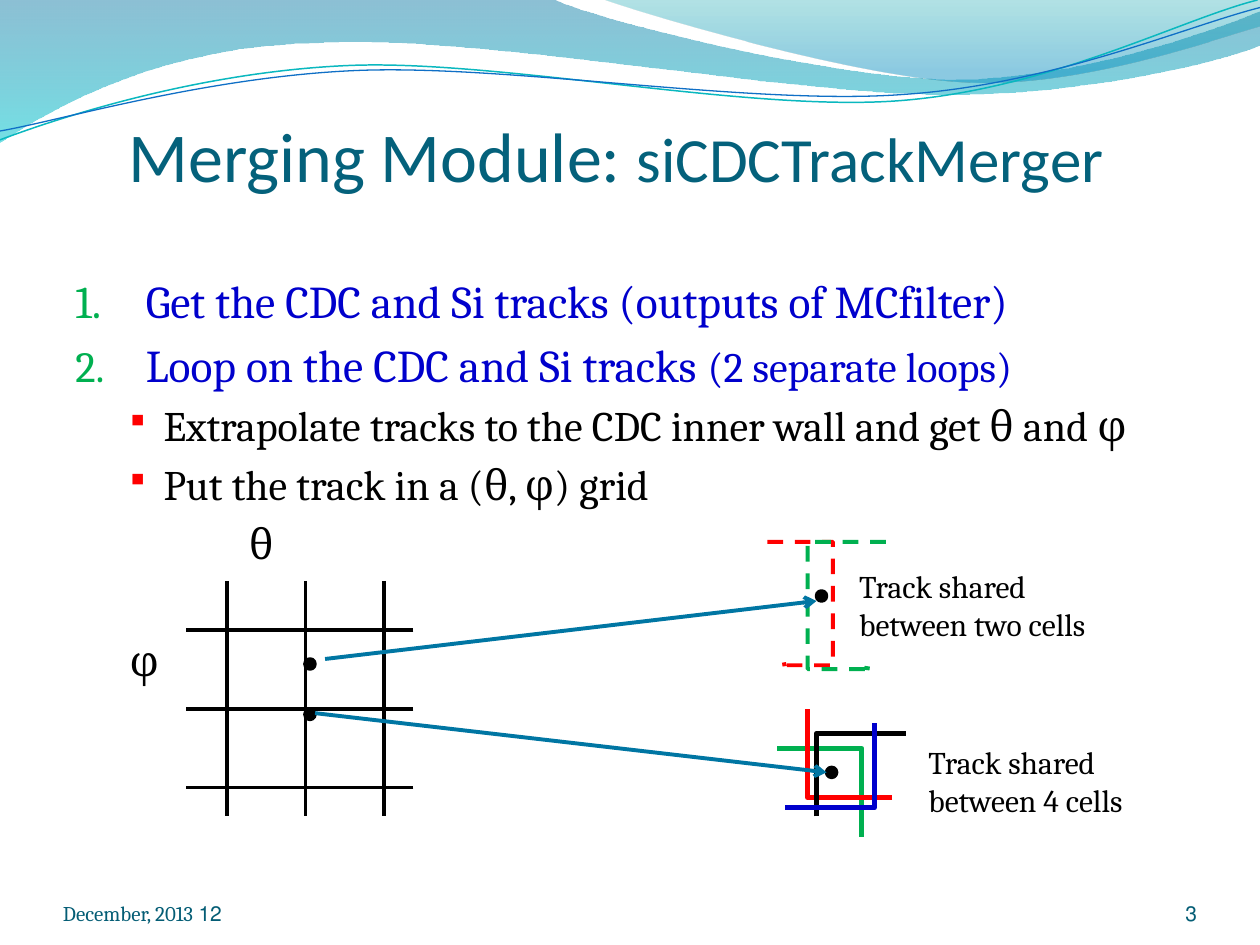
from dataclasses import dataclass
from typing import Optional

from lxml.etree import SubElement
from pptx import Presentation
from pptx.dml.color import RGBColor
from pptx.enum.dml import MSO_LINE as Dash
from pptx.enum.shapes import MSO_CONNECTOR as Connector, MSO_SHAPE as Preset
from pptx.enum.text import MSO_ANCHOR as Anchor, PP_ALIGN as Align
from pptx.oxml.ns import qn
from pptx.util import Emu, Inches, Pt

BLACK = RGBColor(0x00, 0x00, 0x00)
RED = RGBColor(0xFF, 0x00, 0x00)
GREEN = RGBColor(0x00, 0xB0, 0x50)
BLUE = RGBColor(0x00, 0x00, 0xCC)
TITLE_TEAL = RGBColor(0x04, 0x61, 0x7B)
FOOTER_TEAL = RGBColor(0x04, 0x5D, 0x75)
ARROW_BLUE = RGBColor(0x00, 0x76, 0xA3)
WAVE_TEAL = RGBColor(0x0A, 0xB8, 0xBF)
WAVE_BLUE = RGBColor(0x0F, 0x6F, 0xC6)

SLIDE_WIDTH, SLIDE_HEIGHT = Inches(10), Inches(7.5)
COLUMN, ROW = SLIDE_WIDTH / 10, SLIDE_HEIGHT / 7.5
Point = tuple[float, float]


@dataclass
class Stop:
    position: float
    color: RGBColor
    opacity: int


@dataclass
class Outline:
    points: list[Point]
    color: RGBColor
    width: float
    dash: Optional[Dash] = None
    pattern: str = ""


@dataclass
class Item:
    runs: list[tuple[str, float]]
    color: RGBColor
    margin: float
    hanging: float = 0
    space: float = 4.8
    bullet: str = ""
    bullet_color: RGBColor = RED
    bullet_size: int = 85


@dataclass
class Label:
    text: str
    box: tuple[float, float, float, float]
    size: float = 18
    color: RGBColor = BLACK
    footer: bool = False
    align: Align = Align.LEFT


def place(column: float, row: float) -> tuple[Emu, Emu]:
    return Emu(round(column * COLUMN)), Emu(round(row * ROW))


def bend(shape, pattern: str) -> None:
    lines = iter(list(shape._element.iter(qn("a:lnTo"))))
    for kind in pattern:
        line = next(lines)
        if kind == "C":
            line.tag = qn("a:cubicBezTo")
            for extra in (next(lines), next(lines)):
                line.append(extra[0])
                extra.getparent().remove(extra)


def add_freeform(shapes, points: list[Point], close: bool, pattern: str = ""):
    first, *rest = [place(*point) for point in points]
    builder = shapes.build_freeform(*first)
    builder.add_line_segments(rest, close=close)
    shape = builder.convert_to_shape()
    shape.shadow.inherit = False
    return shape, pattern


def add_wave(shapes, points: list[Point], pattern: str, stops: list[Stop]) -> None:
    shape, curves = add_freeform(shapes, points, True, pattern)
    curve_path(shape, curves)
    shape.line.fill.background()
    shape.fill.gradient()
    shape.fill.gradient_angle = 270
    for target, stop in zip(shape.fill.gradient_stops, stops):
        target.position = stop.position
        target.color.rgb = stop.color
    for element, stop in zip(shape._element.iter(qn("a:srgbClr")), stops):
        SubElement(element, qn("a:alpha"), val=str(stop.opacity * 1000))


def curve_path(shape, pattern: str) -> None:
    geometry = shape._element.spPr.find(qn("a:custGeom"))
    lines = iter(list(geometry.iter(qn("a:lnTo"))))
    for kind in pattern:
        line = next(lines)
        if kind == "C":
            bezier = line.makeelement(qn("a:cubicBezTo"))
            line.addprevious(bezier)
            for part in (line, next(lines), next(lines)):
                bezier.append(part[0])
                part.getparent().remove(part)


def add_outline(shapes, outline: Outline) -> None:
    shape, curves = add_freeform(shapes, outline.points, False, outline.pattern)
    curve_path(shape, curves)
    shape.fill.background()
    shape.line.color.rgb = outline.color
    shape.line.width = Pt(outline.width)
    if outline.dash:
        shape.line.dash_style = outline.dash


def add_line(shapes, start: Point, end: Point, color: RGBColor, arrow: bool = False) -> None:
    line = shapes.add_connector(Connector.STRAIGHT, *place(*start), *place(*end))
    line.line.color.rgb = color
    line.line.width = Pt(2.25)
    if arrow:
        SubElement(line.line._get_or_add_ln(), qn("a:tailEnd"), type="arrow")
    SubElement(line._element.spPr, qn("a:effectLst"))


def add_track(shapes, column: float, row: float) -> None:
    dot = shapes.add_shape(Preset.OVAL, *place(column, row), *place(0.08, 0.08))
    dot.shadow.inherit = False
    dot.fill.solid()
    dot.fill.fore_color.rgb = BLACK
    dot.line.color.rgb = BLACK
    dot.line.width = Pt(2)


def add_run(paragraph, text: str, size: float, color: RGBColor, font: str = "Cambria") -> None:
    run = paragraph.add_run()
    run.text = text
    run.font.name, run.font.size = font, Pt(size)
    run.font.color.rgb = color


def add_item(paragraph, item: Item) -> None:
    paragraph.space_before = Pt(item.space)
    properties = paragraph._p.get_or_add_pPr()
    properties.set("marL", str(Inches(item.margin)))
    properties.set("indent", str(Inches(-item.hanging)))
    if item.bullet:
        color = SubElement(properties, qn("a:buClr"))
        SubElement(color, qn("a:srgbClr"), val=str(item.bullet_color))
        SubElement(properties, qn("a:buSzPct"), val=str(item.bullet_size * 1000))
        if item.bullet == "1.":
            SubElement(properties, qn("a:buAutoNum"), type="arabicPeriod")
        else:
            SubElement(properties, qn("a:buFont"), typeface="Wingdings", charset="2")
            SubElement(properties, qn("a:buChar"), char=item.bullet)
    for text, size in item.runs:
        add_run(paragraph, text, size, item.color)


def add_box(shapes, box: tuple[float, float, float, float]):
    left, top, width, height = box
    frame = shapes.add_textbox(*place(left, top), *place(width, height)).text_frame
    frame.word_wrap = True
    return frame


def add_label(shapes, label: Label) -> None:
    frame = add_box(shapes, label.box)
    paragraph = frame.paragraphs[0]
    paragraph.alignment = label.align
    if label.footer:
        frame.margin_left = frame.margin_right = frame.margin_top = frame.margin_bottom = 0
        frame.vertical_anchor = Anchor.BOTTOM
        paragraph._p.get_or_add_pPr().set("rtl", "1")
    add_run(paragraph, label.text, label.size, label.color)


def main() -> None:
    presentation = Presentation()
    presentation.slide_width, presentation.slide_height = SLIDE_WIDTH, SLIDE_HEIGHT
    slide = presentation.slides.add_slide(presentation.slide_layouts[5])
    shapes = slide.shapes

    add_wave(shapes, [
        (0, 0), (4.4, 0), (4.76, 0.17), (6.64, 0.63), (7.58, 0.63), (8.53, 0.63), (9.58, 0.26), (10, 0.09),
        (10, 0.36), (9.83, 0.44), (8.7, 0.76), (7.46, 0.75), (6.22, 0.75), (3.82, 0.28), (2.57, 0.34),
        (1.29, 0.36), (0.46, 0.83), (0, 1.13),
    ], "LCCLCCC", [Stop(0, RGBColor(0x00, 0x74, 0xA1), 45), Stop(1, RGBColor(0x00, 0xC6, 0xCF), 55)])
    add_wave(shapes, [
        (4.79, 0), (5.09, 0.11), (6.82, 0.62), (7.69, 0.65), (8.56, 0.69), (9.61, 0.32), (10, 0.21), (10, 0),
    ], "CCL", [Stop(0, RGBColor(0x00, 0xA1, 0xA9), 30), Stop(0.8, RGBColor(0x00, 0x8B, 0xBF), 45)])
    add_outline(shapes, Outline([
        (0, 1.11), (0.48, 0.93), (1.58, 0.57), (2.77, 0.52), (3.95, 0.47), (5.93, 0.89), (7.13, 0.8),
        (8.33, 0.71), (9.38, 0.15), (9.98, 0)], WAVE_TEAL, 0.85, pattern="CCC"))
    add_outline(shapes, Outline([
        (0, 1.04), (0.47, 0.96), (1.64, 0.61), (2.83, 0.56), (4.03, 0.51), (5.97, 0.84), (7.17, 0.75),
        (8.36, 0.67), (9.41, 0.21), (10, 0.06)], WAVE_BLUE, 0.75, pattern="CCC"))

    title = shapes.title
    title.left, title.top = place(0.39, 0.31)
    title.width, title.height = place(9, 1.25)
    frame = title.text_frame
    frame.vertical_anchor = Anchor.BOTTOM
    frame.margin_left = frame.margin_right = frame.margin_bottom = 0
    frame.paragraphs[0].alignment = Align.CENTER
    for text, size in (("Merging Module: ", 40), ("siCDCTrackMerger", 36)):
        add_run(frame.paragraphs[0], text, size, TITLE_TEAL, "Calibri")
    shapes._spTree.append(title._element)

    step = dict(color=BLUE, margin=0.56, hanging=0.56, space=5.2, bullet="1.", bullet_color=GREEN)
    detail = dict(color=BLACK, margin=0.7, hanging=0.27, bullet="§")
    items = [
        Item([("Get the CDC and Si tracks (outputs of MCfilter)", 26)], bullet_size=100, **step),
        Item([("Loop on the CDC and Si tracks ", 26), ("(2 separate loops)", 24)], bullet_size=95, **step),
        Item([("Extrapolate tracks to the CDC inner wall and get θ and φ", 24)], **detail),
        Item([("Put the track in a (θ, φ) grid", 24)], **detail),
        Item([("θ", 24)], BLACK, margin=1.38),
        Item([("φ", 24)], BLACK, margin=0.43, space=38),
    ]
    body = add_box(shapes, (0.5, 2.12, 9, 4.8))
    for index, item in enumerate(items):
        add_item(body.add_paragraph() if index else body.paragraphs[0], item)

    for index in range(3):
        column, row = 1.8 + 0.625 * index, 5 + 0.625 * index
        add_line(shapes, (column, 4.61), (column, 6.48), BLACK)
        add_line(shapes, (3.28, row), (1.48, row), BLACK)

    for outline in (
        Outline([(6.09, 4.3), (6.61, 4.3), (6.61, 5.28), (6.18, 5.28), (6.24, 5.27)], RED, 2.25, Dash.DASH),
        Outline([(7.03, 4.3), (6.41, 4.3), (6.41, 5.31), (6.93, 5.31), (6.86, 5.3)], GREEN, 2.25, Dash.DASH),
        Outline([(6.17, 5.94), (6.84, 5.94), (6.84, 6.64)], GREEN, 3),
        Outline([(7.08, 6.33), (6.41, 6.33), (6.41, 5.63)], RED, 3),
        Outline([(6.48, 6.48), (6.48, 5.82), (7.19, 5.82)], BLACK, 3),
        Outline([(6.94, 5.74), (6.94, 6.41), (6.23, 6.41)], BLUE, 3),
    ):
        add_outline(shapes, outline)
    for track in ((2.42, 5.23), (6.48, 4.69), (6.56, 6.09), (2.42, 5.63)):
        add_track(shapes, *track)
    add_line(shapes, (2.58, 5.23), (6.48, 4.77), ARROW_BLUE, arrow=True)
    add_line(shapes, (2.5, 5.66), (6.56, 6.13), ARROW_BLUE, arrow=True)

    for label in (
        Label("Track shared between two cells", (6.72, 4.45, 2.19, 0.71)),
        Label("Track shared between 4 cells", (7.27, 5.85, 2.11, 0.71)),
        Label("12 December, 2013", (0.5, 6.95, 2.33, 0.4), 12, FOOTER_TEAL, True),
        Label("3", (8.67, 6.95, 0.83, 0.4), 12, FOOTER_TEAL, True, Align.RIGHT),
    ):
        add_label(shapes, label)
    presentation.save("out.pptx")


if __name__ == "__main__":
    main()
